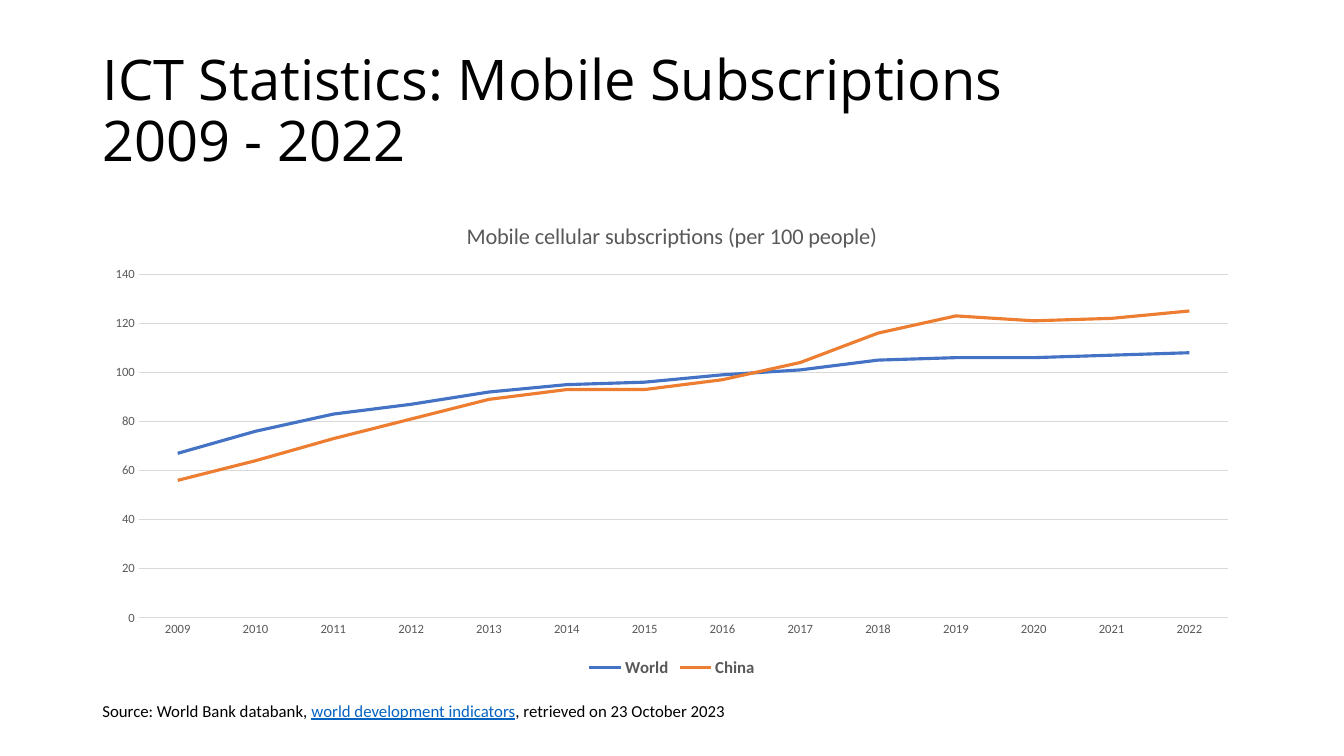
from pptx import Presentation
from pptx.chart.data import CategoryChartData
from pptx.dml.color import RGBColor
from pptx.enum.chart import XL_CHART_TYPE as Kind, XL_LEGEND_POSITION as Spot, XL_TICK_MARK as Tick
from pptx.enum.text import MSO_ANCHOR as Anchor, PP_ALIGN as Align
from pptx.util import Cm, Pt

HUES = {"text": "000000", "label": "595959", "grid": "D9D9D9",
        "link": "0563C1", "World": "4472C4", "China": "ED7D31"}
RATES = {
    "World": [67, 76, 83, 87, 92, 95, 96, 99, 101, 105, 106, 106, 107, 108],
    "China": [56, 64, 73, 81, 89, 93, 93, 97, 104, 116, 123, 121, 122, 125],
}
LEFT, WIDE = Cm(2.33), Cm(29.21)


def style(font, size, hue, name="Calibri", bold=False):
    font.size, font.name, font.bold = Pt(size), name, bold
    font.color.rgb = RGBColor.from_string(HUES[hue])


def stroke(line, hue, width):
    line.color.rgb = RGBColor.from_string(HUES[hue])
    line.width = Pt(width)


deck = Presentation()
deck.slide_width, deck.slide_height = Cm(33.87), Cm(19.05)
slide = deck.slides.add_slide(deck.slide_layouts[5])

# Title
title = slide.shapes.title
title.left, title.top, title.width, title.height = LEFT, Cm(1.01), WIDE, Cm(3.68)
title.text_frame.text = "ICT Statistics: Mobile Subscriptions\v2009 - 2022"
title.text_frame.vertical_anchor = Anchor.MIDDLE
head = title.text_frame.paragraphs[0]
head.alignment = Align.LEFT
head.line_spacing = 0.9
style(head.font, 40, "text", "Open Sans")

# Chart
data = CategoryChartData(number_format="0")
data.categories = [str(year) for year in range(2009, 2023)]
for name, rates in RATES.items():
    data.add_series(name, rates)
chart = slide.shapes.add_chart(
    Kind.LINE, LEFT, Cm(5.08), WIDE, Cm(12.09), data).chart
style(chart.font, 10, "text")

chart.has_title = True
frame = chart.chart_title.text_frame
frame.text = "Mobile cellular subscriptions (per 100 people)"
style(frame.paragraphs[0].font, 16, "label")
chart.chart_title.include_in_layout = False

chart.has_legend = True
chart.legend.position = Spot.BOTTOM
chart.legend.include_in_layout = False
style(chart.legend.font, 12, "label", bold=True)

for series in chart.plots[0].series:
    series.smooth = False
    stroke(series.format.line, series.name, 2.25)

# Axes
years, scale = chart.category_axis, chart.value_axis
for axis in (years, scale):
    axis.major_tick_mark = axis.minor_tick_mark = Tick.NONE
    style(axis.tick_labels.font, 9, "label")
stroke(years.format.line, "grid", 0.75)
scale.format.line.fill.background()
stroke(scale.major_gridlines.format.line, "grid", 0.75)
scale.minimum_scale, scale.maximum_scale, scale.major_unit = 0, 140, 20
scale.tick_labels.number_format = "0"
scale.tick_labels.number_format_is_linked = False

# Source line
note = slide.shapes.add_textbox(LEFT, Cm(17.53), Cm(28.04), Cm(0.77)).text_frame
note.word_wrap = True
line = note.paragraphs[0]
for text, hue in (("Source: World Bank databank, ", "text"),
                  ("world development indicators", "link"),
                  (", retrieved on 23 October 2023", "text")):
    run = line.add_run()
    run.text = text
    style(run.font, 12, hue)
    run.font.underline = hue == "link"

deck.save("out.pptx")
